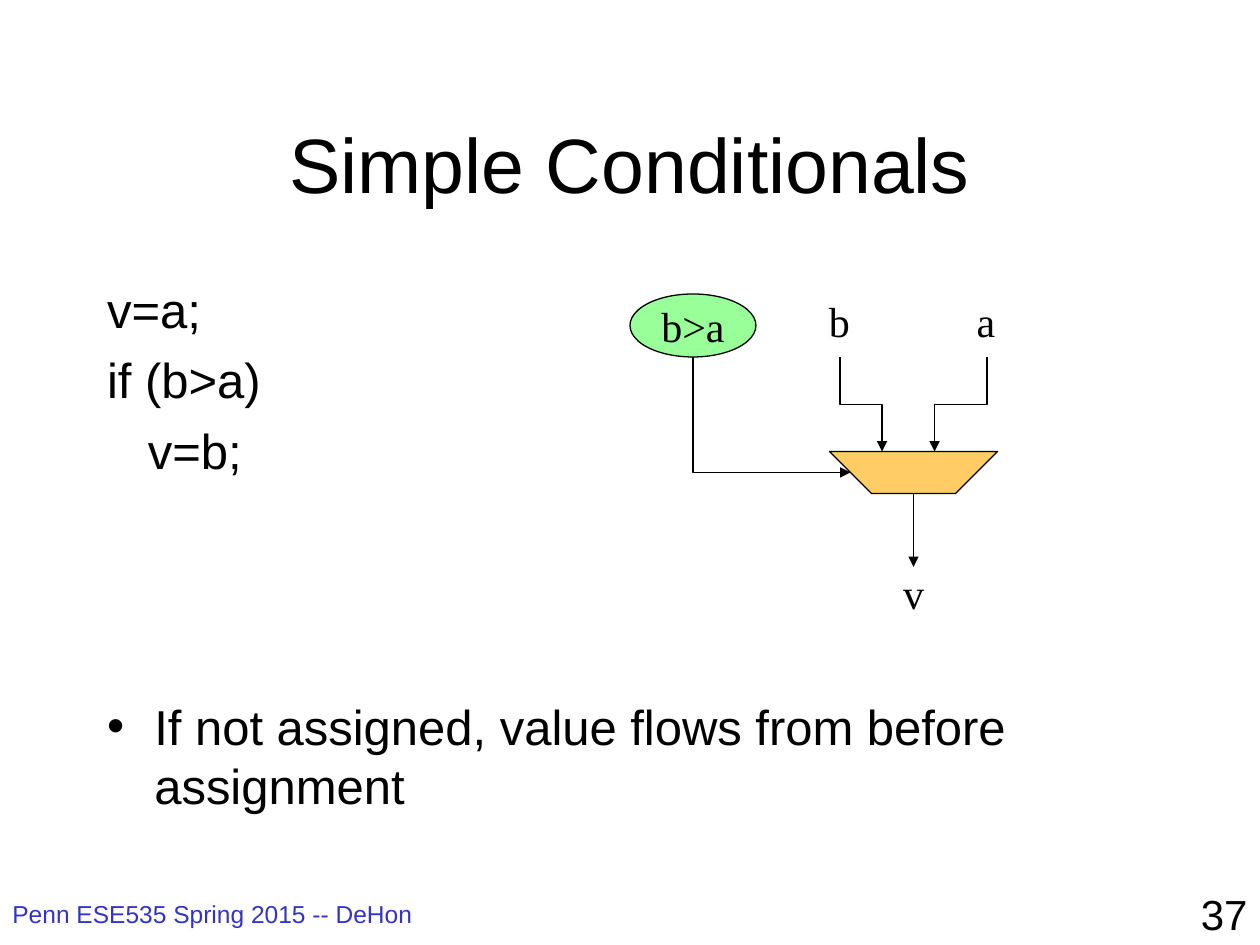
from lxml import etree
from pptx import Presentation
from pptx.dml.color import RGBColor
from pptx.enum.shapes import MSO_CONNECTOR, MSO_SHAPE
from pptx.enum.text import MSO_ANCHOR, MSO_AUTO_SIZE, PP_ALIGN
from pptx.oxml.ns import qn
from pptx.util import Pt

STRAIGHT, ELBOW = MSO_CONNECTOR.STRAIGHT, MSO_CONNECTOR.ELBOW
OVAL = MSO_SHAPE.OVAL
TOP, MIDDLE = MSO_ANCHOR.TOP, MSO_ANCHOR.MIDDLE
LEFT, CENTER, RIGHT = PP_ALIGN.LEFT, PP_ALIGN.CENTER, PP_ALIGN.RIGHT
NO_FIT = MSO_AUTO_SIZE.NONE

SANS, SERIF = "Arial", "Times New Roman"
BLACK, BLUE, GREEN, ORANGE = "000000", "3333CC", "99FF99", "FFCC66"

TITLE = "Simple Conditionals"
BODY = [
    ("v=a;", 0, None),
    ("if (b>a)", 6.7, None),
    ("   v=b;", 6.7, None),
    ("If not assigned, value flows from before assignment", 124, "•"),
]
TEXT_BOXES = [
    ("Penn ESE535 Spring 2015 -- DeHon", (0, 510, 276, 30), SANS, 14, BLUE, LEFT, True),
    ("37", (570, 504, 150, 36), SANS, 24, BLACK, RIGHT, True),
    ("b", (466.5, 165.6, 26.5, 36), SERIF, 24, BLACK, LEFT, False),
    ("a", (551, 165.6, 25, 36), SERIF, 24, BLACK, LEFT, False),
    ("v", (509, 321, 26.5, 36), SERIF, 24, BLACK, LEFT, False),
]
CONDITION = ("b>a", (360, 168, 72, 36))
MUX = [(474, 258), (498, 282), (546, 282), (570, 258)]
ELBOWS = [
    ("bentConnector2", (396, 204), (486, 270)),
    ("bentConnector3", (480, 204), (504, 258)),
    ("bentConnector3", (564, 204), (534, 258)),
]
OUTPUT = ((522, 282), (522, 324))


def color(value):
    return RGBColor.from_string(value)


def points(values):
    return [Pt(value) for value in values]


def place(shape, area):
    shape.left, shape.top, shape.width, shape.height = points(area)


def format_text(frame, font, size, ink, align, anchor=TOP, wrap=True):
    frame.auto_size = NO_FIT
    frame.word_wrap = wrap
    frame.vertical_anchor = anchor
    for para in frame.paragraphs:
        para.alignment = align
        for span in para.runs:
            span.font.name = font
            span.font.size = Pt(size)
            span.font.color.rgb = color(ink)


def paint(shape, fill):
    shape.shadow.inherit = False
    shape.fill.solid()
    shape.fill.fore_color.rgb = color(fill)
    shape.line.color.rgb = color(BLACK)
    shape.line.width = Pt(0.75)


def add_arrow(shapes, kind, start, end):
    connector = shapes.add_connector(kind, *points((*start, *end)))
    connector.line.color.rgb = color(BLACK)
    connector.line.width = Pt(0.75)
    properties = connector.element.spPr
    etree.SubElement(properties.find(qn("a:ln")), qn("a:tailEnd"), type="triangle")
    etree.SubElement(properties, qn("a:effectLst"))
    return connector


def add_elbow(shapes, preset, start, end):
    (x1, y1), (x2, y2) = start, end
    middle_x, middle_y = (x1 + x2) / 2, (y1 + y2) / 2
    half_run, half_rise = (y2 - y1) / 2, abs(x2 - x1) / 2
    side = 1 if x2 > x1 else -1
    connector = add_arrow(
        shapes, ELBOW,
        (middle_x + side * half_run, middle_y - half_rise),
        (middle_x - side * half_run, middle_y + half_rise),
    )
    properties = connector.element.spPr
    properties.find(qn("a:xfrm")).set("rot", str((270 if side > 0 else 90) * 60000))
    properties.find(qn("a:prstGeom")).set("prst", preset)


def fill_body(body):
    place(body, (54, 156, 612, 324))
    frame = body.text_frame
    frame.text = "\n".join(text for text, _, _ in BODY)
    for para, (_, space, bullet) in zip(frame.paragraphs, BODY):
        properties = para._p.get_or_add_pPr()
        properties.set("marL", str(Pt(27)))
        properties.set("indent", str(-Pt(27)))
        if bullet:
            etree.SubElement(properties, qn("a:buChar"), char=bullet)
        else:
            etree.SubElement(properties, qn("a:buNone"))
        para.space_before = Pt(space)
    format_text(frame, SANS, 28, BLACK, LEFT)


def main():
    deck = Presentation()
    deck.slide_width, deck.slide_height = Pt(720), Pt(540)
    page = deck.slides.add_slide(deck.slide_layouts[1])
    shapes = page.shapes

    title = shapes.title
    place(title, (54, 48, 612, 90))
    title.text_frame.text = TITLE
    format_text(title.text_frame, SANS, 44, BLACK, CENTER, MIDDLE)
    fill_body(page.placeholders[1])

    text, area = CONDITION
    condition = shapes.add_shape(OVAL, *points(area))
    paint(condition, GREEN)
    condition.text_frame.text = text
    format_text(condition.text_frame, SERIF, 24, BLACK, CENTER, MIDDLE, False)

    outline = [points(corner) for corner in MUX]
    builder = shapes.build_freeform(*outline[0])
    builder.add_line_segments(outline[1:], close=True)
    paint(builder.convert_to_shape(), ORANGE)

    for preset, start, end in ELBOWS:
        add_elbow(shapes, preset, start, end)
    add_arrow(shapes, STRAIGHT, *OUTPUT)

    for text, area, font, size, ink, align, wrap in TEXT_BOXES:
        box = shapes.add_textbox(*points(area))
        box.text_frame.text = text
        format_text(box.text_frame, font, size, ink, align, wrap=wrap)

    deck.save("out.pptx")


if __name__ == "__main__":
    main()
